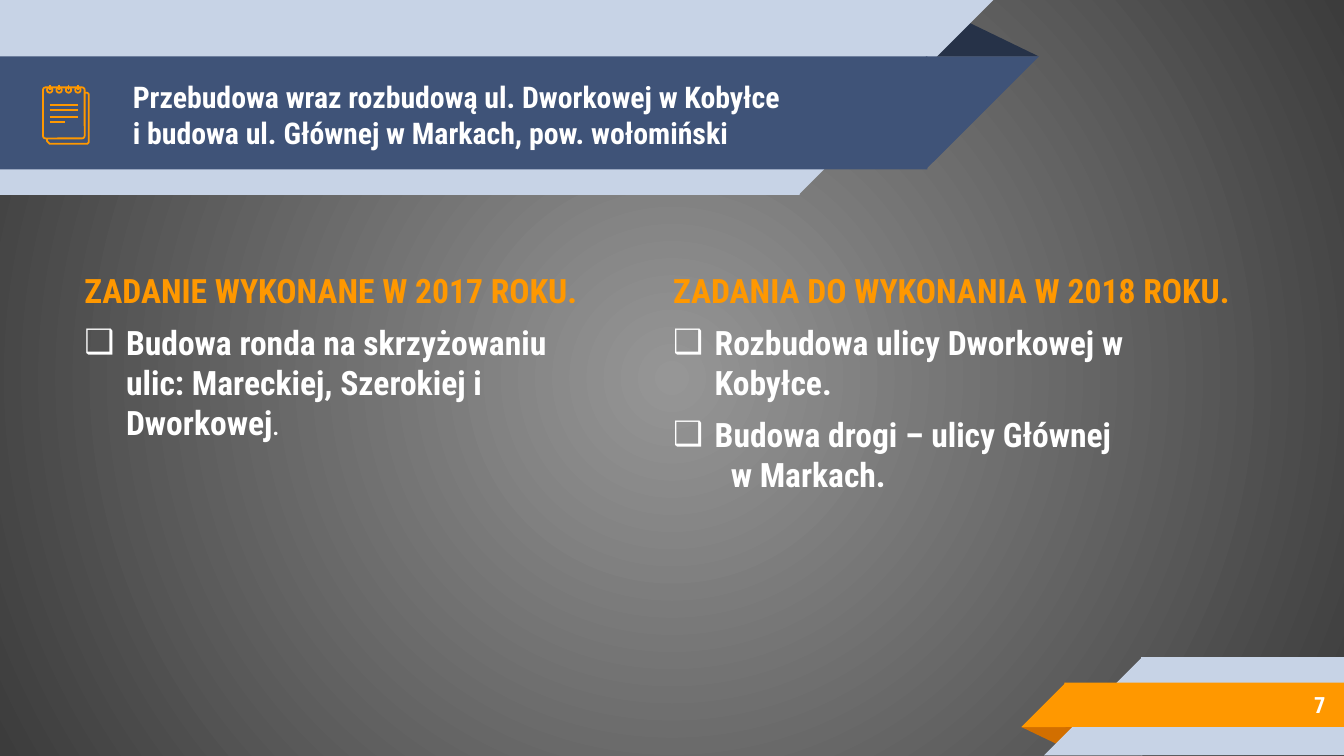
from lxml import etree
from pptx import Presentation
from pptx.dml.color import RGBColor
from pptx.enum.shapes import MSO_CONNECTOR, MSO_SHAPE
from pptx.enum.text import MSO_ANCHOR, PP_ALIGN
from pptx.oxml.ns import qn
from pptx.util import Inches, Pt

COLORS = {
    "center": "969696", "edge": "3C3C3C", "pale": "C7D3E6", "navy": "3F5378",
    "navy_fold": "263248", "orange": "FF9800", "orange_fold": "D26F00", "white": "FFFFFF",
}
RGB = {name: RGBColor.from_string(value) for name, value in COLORS.items()}
FONT = "Roboto Condensed"
ICON_LINE = Pt(0.96)

prs = Presentation()
prs.slide_width, prs.slide_height = Inches(10), Inches(10) * 9 // 16
slide = prs.slides.add_slide(prs.slide_layouts[6])
shapes = slide.shapes

# Radial background
fill = slide.background.fill
fill.gradient()
for stop, name in zip(fill.gradient_stops, ("center", "edge")):
    stop.color.rgb = RGB[name]
grad = slide.background._cSld.find(".//" + qn("a:gradFill"))
grad.remove(grad.find(qn("a:lin")))
path = etree.SubElement(grad, qn("a:path"), path="circle")
etree.SubElement(path, qn("a:fillToRect"), l="50000", t="50000", r="50000", b="50000")

# Ribbons: preset, left, top, width, height, colour, rotation, flipped
# Each rectangle overlaps its triangle by 0.01 so that no seam shows
TRI, RECT, RIGHT = MSO_SHAPE.ISOSCELES_TRIANGLE, MSO_SHAPE.RECTANGLE, MSO_SHAPE.RIGHT_TRIANGLE
ribbons = [
    (TRI, 6.88, 0.14, 0.85, 0.28, "navy_fold", 0, False),
    (RECT, 0, 0, 5.95, 1.45, "pale", 0, False),
    (RIGHT, 5.94, 0, 1.45, 1.45, "pale", 180, True),
    (RECT, 0, 0.42, 6.9, 0.84, "navy", 0, False),
    (RIGHT, 6.89, 0.42, 0.84, 0.84, "navy", 180, True),
    (TRI, 7.6, 5.41, 0.43, 0.14, "orange_fold", 180, False),
    (RECT, 8.49, 4.89, 1.51, 0.73, "pale", 0, False),
    (RIGHT, 7.77, 4.89, 0.73, 0.73, "pale", 0, True),
    (RECT, 7.92, 5.08, 2.08, 0.33, "orange", 0, False),
    (RIGHT, 7.6, 5.08, 0.33, 0.33, "orange", 0, True),
]
for preset, x, y, w, h, color, rotation, flipped in ribbons:
    s = shapes.add_shape(preset, Inches(x), Inches(y), Inches(w), Inches(h))
    s.shadow.inherit = False
    s.fill.solid()
    s.fill.fore_color.rgb = RGB[color]
    s.line.fill.background()
    s.rotation = rotation
    if preset == TRI:
        s.adjustments[0] = 0.32
    if flipped:
        s._element.spPr.find(qn("a:xfrm")).set("flipH", "1")


def add_text(x, y, w, h, paragraphs, anchor=MSO_ANCHOR.TOP):
    """Add a text box; paragraphs are (text, size, colour) and come out bold."""
    tf = shapes.add_textbox(Inches(x), Inches(y), Inches(w), Inches(h)).text_frame
    tf.word_wrap = True
    tf.vertical_anchor = anchor
    tf.margin_left = tf.margin_right = tf.margin_top = tf.margin_bottom = Inches(0.1)
    for i, (text, size, color) in enumerate(paragraphs):
        p = tf.paragraphs[0] if i == 0 else tf.add_paragraph()
        p.text = text
        p.font.name, p.font.size, p.font.bold = FONT, Pt(size), True
        p.font.color.rgb = RGB[color]
    return tf


add_text(0.89, 0.43, 6.07, 0.84, [(
    "Przebudowa wraz rozbudową ul. Dworkowej w Kobyłce\v"
    "i budowa ul. Głównej w Markach, pow. wołomiński", 16, "white")], MSO_ANCHOR.MIDDLE)

# Task columns
columns = [
    (0.53, 4.06, "ZADANIE WYKONANE W 2017 ROKU.",
     ["Budowa ronda na skrzyżowaniu ulic: Mareckiej, Szerokiej i Dworkowej"]),
    (4.91, 4.37, "ZADANIA DO WYKONANIA W 2018 ROKU.",
     ["Rozbudowa ulicy Dworkowej w Kobyłce.", "Budowa drogi – ulicy Głównej\v\tw Markach."]),
]
for x, w, heading, tasks in columns:
    tf = add_text(x, 1.91, w, 1.92,
                  [(heading, 18, "orange")] + [(task, 18, "white") for task in tasks])
    for p in tf.paragraphs[1:]:
        p.space_before = Pt(6)
        pPr = p._p.get_or_add_pPr()
        pPr.set("marL", str(Inches(0.31)))
        pPr.set("indent", str(-Inches(0.31)))
        bullet_color = etree.Element(qn("a:buClr"))
        etree.SubElement(bullet_color, qn("a:srgbClr"), val=COLORS["white"])
        bullet_font = etree.Element(qn("a:buFont"), typeface=FONT)
        bullet = etree.Element(qn("a:buChar"), char="❑")
        tabs = etree.Element(qn("a:tabLst"))
        etree.SubElement(tabs, qn("a:tab"), pos=str(Inches(0.43)), algn="l")
        for element in (bullet_color, bullet_font, bullet, tabs):
            pPr.find(qn("a:defRPr")).addprevious(element)
    if len(tasks) == 1:
        r = p.add_run()
        r.text = "."
        r.font.size = Pt(12)

tf = add_text(8.33, 5.07, 1.63, 0.35, [("7", 12, "white")], MSO_ANCHOR.MIDDLE)
tf.paragraphs[0].alignment = PP_ALIGN.RIGHT

# Notepad icon: back page (in hundredths of an inch), front page, rings, strokes
back = shapes.build_freeform(35, 103, scale=Inches(0.01))
back.add_line_segments([(35, 105), (37, 107), (65, 107), (66, 106),
                        (66, 70), (65, 69), (63, 69)], close=False)
outlines = [back.convert_to_shape()]
page = shapes.add_shape(MSO_SHAPE.ROUNDED_RECTANGLE,
                        Inches(0.32), Inches(0.65), Inches(0.31), Inches(0.38))
page.adjustments[0] = 0.06
outlines.append(page)

strokes = [(0.37, 0.78, 0.58, 0.78), (0.37, 0.82, 0.58, 0.82),
           (0.37, 0.87, 0.58, 0.87), (0.37, 0.91, 0.48, 0.91)]
for i in range(4):
    x = 0.37 + 0.07 * i
    outlines.append(shapes.add_shape(MSO_SHAPE.OVAL, Inches(x - 0.02), Inches(0.65),
                                     Inches(0.04), Inches(0.04)))
    strokes.append((x, 0.63, x, 0.67))
for s in outlines:
    s.shadow.inherit = False
    s.fill.background()
    s.line.color.rgb = RGB["orange"]
    s.line.width = ICON_LINE
for x1, y1, x2, y2 in strokes:
    s = shapes.add_connector(MSO_CONNECTOR.STRAIGHT,
                             Inches(x1), Inches(y1), Inches(x2), Inches(y2))
    s.line.color.rgb = RGB["orange"]
    s.line.width = ICON_LINE
    etree.SubElement(s._element.spPr, qn("a:effectLst"))

prs.save("out.pptx")
